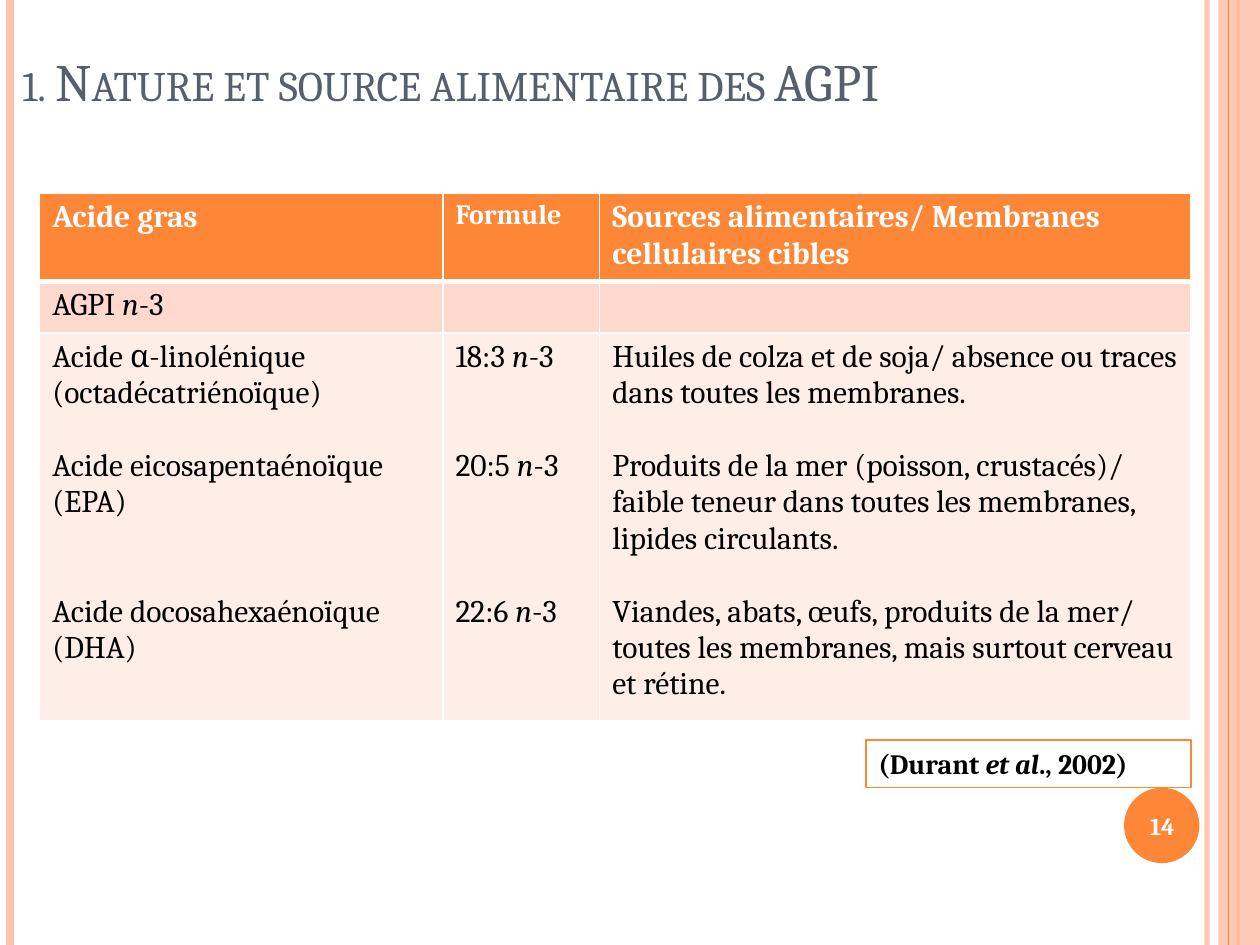
from lxml import etree
from pptx import Presentation
from pptx import util as u
from pptx.dml.color import RGBColor
from pptx.enum import shapes, text
from pptx.oxml.ns import qn

Cm, Pt = u.Cm, u.Pt
FONT = "Cambria"
ORANGE, PEACH, WHITE, BLACK, SLATE = "FE8637", "FEC3AE", "FFFFFF", "000000", "575F6D"
ROW_FILLS = [ORANGE, "FFD9CE", "FFEDE8"]
LINE_GAP = 20.8  # height of one 18 pt text line, in points

HEADER = ["Acide gras", "Formule", "Sources alimentaires/ Membranes cellulaires cibles"]
SUBHEADER = ["AGPI *n*-3", "", ""]
# Each column: its paragraphs and the number of empty lines before each
BODY = [
    (["Acide α-linolénique (octadécatriénoïque)",
      "Acide eicosapentaénoïque (EPA)",
      "Acide docosahexaénoïque (DHA)"], [0, 1, 2]),
    (["18:3 *n*-3", "20:5 *n*-3", "22:6 *n*-3"], [0, 2, 3]),
    (["Huiles de colza et de soja/ absence ou traces dans toutes les membranes.",
      "Produits de la mer (poisson, crustacés)/ faible teneur dans toutes les membranes, "
      "lipides circulants.",
      "Viandes, abats, œufs, produits de la mer/ toutes les membranes, "
      "mais surtout cerveau et rétine."], [0, 1, 1]),
]


def rgb(color):
    return RGBColor.from_string(color)


def set_alpha(shape, percent):
    """Make the shape's only colour partly transparent."""
    color = next(shape._element.spPr.iter(qn("a:srgbClr")))
    etree.SubElement(color, qn("a:alpha")).set("val", str(percent * 1000))


def write(paragraph, content, size=18, color=BLACK, bold=False, small_caps=False,
          align=None, before=0):
    """Write text in a paragraph; parts between asterisks are italic."""
    paragraph.alignment = align
    paragraph.space_before = Pt(before)
    for index, part in enumerate(content.split("*")):
        if not part:
            continue
        run = paragraph.add_run()
        run.text = part
        run.font.name = FONT
        run.font.size = Pt(size)
        run.font.bold = bold
        run.font.italic = index % 2 == 1
        run.font.color.rgb = rgb(color)
        if small_caps:
            run._r.get_or_add_rPr().set("cap", "small")


def add_text(slide, box, content, anchor=text.MSO_ANCHOR.TOP, **style):
    shape = slide.shapes.add_textbox(*map(Cm, box))
    frame = shape.text_frame
    frame.word_wrap = True
    frame.vertical_anchor = anchor
    write(frame.paragraphs[0], content, **style)
    return shape


def add_filled(slide, kind, box, color, alpha=None):
    shape = slide.shapes.add_shape(kind, *map(Cm, box))
    shape.shadow.inherit = False
    shape.fill.solid()
    shape.fill.fore_color.rgb = rgb(color)
    shape.line.fill.background()
    if alpha:
        set_alpha(shape, alpha)


def add_vertical_line(slide, x, color, width, alpha=None):
    line = slide.shapes.add_connector(
        shapes.MSO_CONNECTOR.STRAIGHT, Cm(x), Cm(0), Cm(x), Cm(19.05))
    line.line.color.rgb = rgb(color)
    line.line.width = Pt(width)
    if alpha:
        set_alpha(line, alpha)
    etree.SubElement(line._element.spPr, qn("a:effectLst"))


def format_cell(cell, fill, top, bottom):
    """Set white borders (widths in points), then the fill."""
    properties = cell._tc.get_or_add_tcPr()
    for side, width in zip("LRTB", (1, 1, top, bottom)):
        border = etree.SubElement(properties, qn(f"a:ln{side}"), w=str(int(Pt(width))))
        solid = etree.SubElement(border, qn("a:solidFill"))
        etree.SubElement(solid, qn("a:srgbClr"), val=WHITE)
    cell.fill.solid()
    cell.fill.fore_color.rgb = rgb(fill)


def add_fatty_acid_table(slide):
    widths, heights = [8.13, 3.16, 11.92], [1.7, 1.04, 7.58]
    frame = slide.shapes.add_table(3, 3, Cm(0.8), Cm(3.89), Cm(sum(widths)), Cm(sum(heights)))
    table = frame.table
    table.first_row = table.horz_banding = False
    for column, width in zip(table.columns, widths):
        column.width = Cm(width)
    for index, height in enumerate(heights):
        table.rows[index].height = Cm(height)
        for cell in table.rows[index].cells:
            format_cell(cell, ROW_FILLS[index],
                        top=3 if index == 1 else 1, bottom=3 if index == 0 else 1)

    for index, (entries, gaps) in enumerate(BODY):
        write(table.cell(0, index).text_frame.paragraphs[0], HEADER[index],
              size=16 if index == 1 else 18, color=WHITE, bold=True)
        write(table.cell(1, index).text_frame.paragraphs[0], SUBHEADER[index])
        body = table.cell(2, index).text_frame
        for number, (entry, gap) in enumerate(zip(entries, gaps)):
            paragraph = body.add_paragraph() if number else body.paragraphs[0]
            write(paragraph, entry, before=gap * LINE_GAP)


def add_decoration(slide):
    add_vertical_line(slide, 24.33, PEACH, 3, alpha=93)
    add_vertical_line(slide, 0.2, PEACH, 4.5)
    add_vertical_line(slide, 24.97, ORANGE, 1.5)
    add_filled(slide, shapes.MSO_SHAPE.RECTANGLE, (24.56, 0, 0.84, 19.05), PEACH, alpha=87)
    add_vertical_line(slide, 24.77, ORANGE, 0.75)
    add_filled(slide, shapes.MSO_SHAPE.OVAL, (22.66, 15.88, 1.52, 1.52), ORANGE)


def main():
    presentation = Presentation()
    presentation.slide_width, presentation.slide_height = Cm(25.4), Cm(19.05)
    slide = presentation.slides.add_slide(presentation.slide_layouts[6])

    # Side bands and page number
    add_decoration(slide)
    add_text(slide, (22.58, 15.93, 1.7, 1.45), "14", anchor=text.MSO_ANCHOR.MIDDLE,
             size=14, color=WHITE, bold=True, align=text.PP_ALIGN.CENTER)

    # Title
    add_text(slide, (0.2, -0.79, 24.61, 3.18), "1. Nature et source alimentaire des AGPI",
             anchor=text.MSO_ANCHOR.BOTTOM, size=30, color=SLATE, small_caps=True)

    # Table and its reference
    add_fatty_acid_table(slide)
    reference = add_text(slide, (17.46, 14.92, 6.55, 0.95), "(Durant *et al*., 2002)",
                         size=16, bold=True)
    reference.line.color.rgb = rgb(ORANGE)
    reference.line.width = Pt(0.75)

    presentation.save("out.pptx")


if __name__ == "__main__":
    main()
